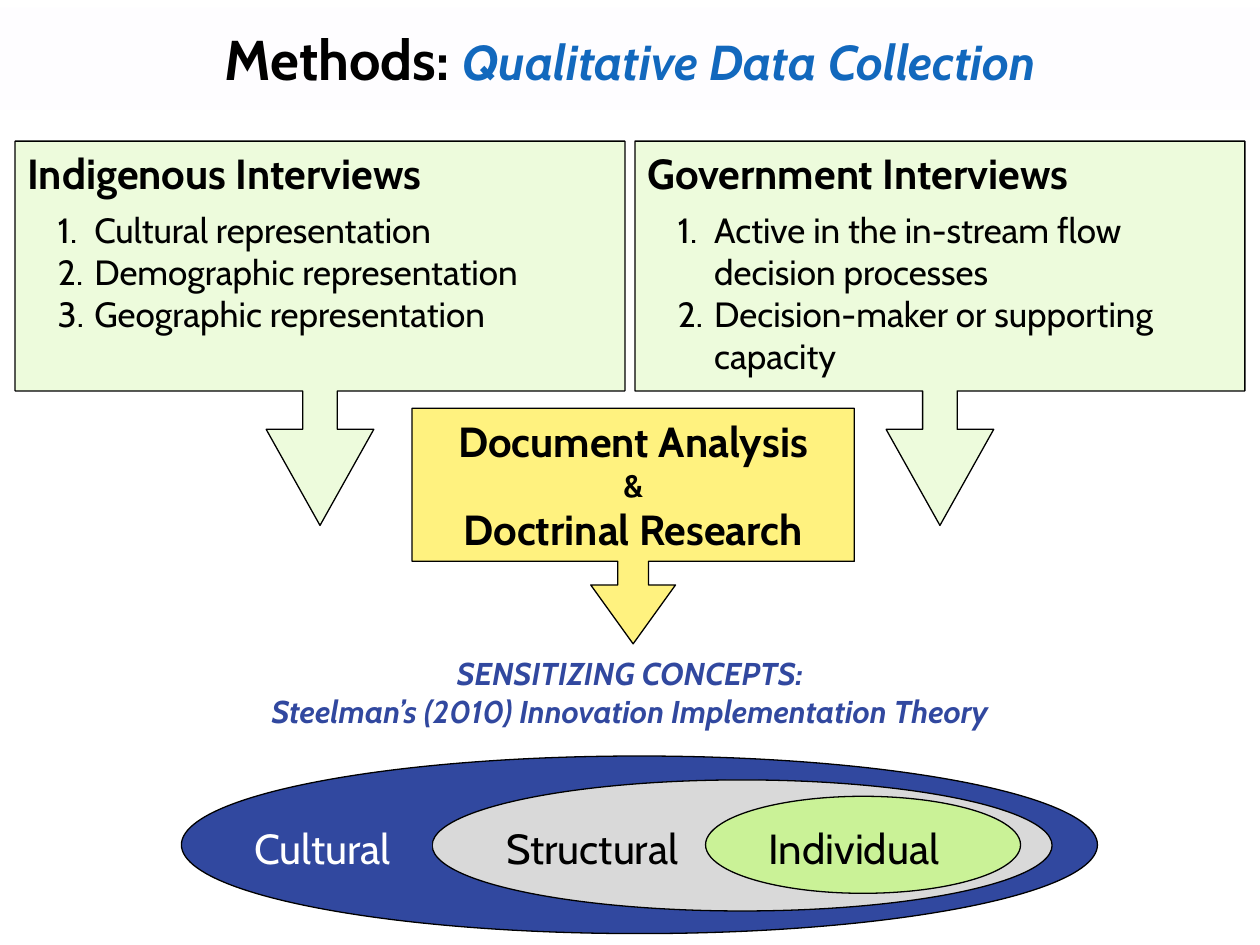
import dataclasses

import pptx
import pptx.dml.color
import pptx.enum.shapes
import pptx.enum.text
import pptx.oxml.ns
import pptx.util
from lxml import etree

SHAPE = pptx.enum.shapes.MSO_SHAPE
ANCHOR = pptx.enum.text.MSO_ANCHOR
ALIGN = pptx.enum.text.PP_ALIGN
FIT = pptx.enum.text.MSO_AUTO_SIZE


@dataclasses.dataclass(frozen=True)
class Theme:
    font: str = "Cabin"
    black: str = "000000"
    white: str = "FFFFFF"
    paper: str = "FEFDFF"
    navy: str = "31489F"
    blue: str = "1268BD"
    gray: str = "D9D9D9"
    lime: str = "CAF297"
    mint: str = "EDFBDC"
    yellow: str = "FFF27F"
    title: int = 32
    subtitle: int = 28
    heading: int = 24
    body: int = 20
    small: int = 18
    outline: float = 0.75


def rgb(color):
    return pptx.dml.color.RGBColor.from_string(color)


def write(para, text, font, size, color, bold=False, italic=False):
    span = para.add_run()
    span.text = text
    span.font.name = font
    span.font.size = pptx.util.Pt(size)
    span.font.color.rgb = rgb(color)
    span.font.bold = bold
    span.font.italic = italic


class SlideBuilder:
    """Places elements on a grid of 100 columns by 75 rows."""

    def __init__(self, deck, theme):
        self.theme = theme
        self.slide = deck.slides.add_slide(deck.slide_layouts[6])
        self.column = deck.slide_width / 100
        self.row = deck.slide_height / 75

    def place(self, left, top, width, height):
        return (round(left * self.column), round(top * self.row),
                round(width * self.column), round(height * self.row))

    def shape(self, kind, area, fill, outlined=True):
        box = self.slide.shapes.add_shape(kind, *self.place(*area))
        box.shadow.inherit = False
        box.fill.solid()
        box.fill.fore_color.rgb = rgb(fill)
        if outlined:
            box.line.color.rgb = rgb(self.theme.black)
            box.line.width = pptx.util.Pt(self.theme.outline)
        else:
            box.line.fill.background()
        return box

    def paragraphs(self, box, lines, align=ALIGN.LEFT, anchor=ANCHOR.TOP, fit=FIT.NONE):
        """Each line is a list of (text, format) spans."""
        frame = box.text_frame
        frame.word_wrap = True
        frame.auto_size = fit
        frame.vertical_anchor = anchor
        for index, line in enumerate(lines):
            para = frame.paragraphs[0] if index == 0 else frame.add_paragraph()
            para.alignment = align
            for text, style in line:
                write(para, text, **{"font": self.theme.font, "color": self.theme.black, **style})
        return frame.paragraphs

    def title(self, area, spans):
        box = self.shape(SHAPE.RECTANGLE, area, self.theme.paper, outlined=False)
        self.paragraphs(box, [spans], ALIGN.CENTER, ANCHOR.MIDDLE)

    def caption(self, area, lines, **style):
        box = self.slide.shapes.add_textbox(*self.place(*area))
        self.paragraphs(box, [[(line, style)] for line in lines], ALIGN.CENTER,
                        fit=FIT.SHAPE_TO_FIT_TEXT)

    def ellipse(self, area, fill):
        self.shape(SHAPE.OVAL, area, fill)

    def label(self, area, text, fill, color):
        box = self.shape(SHAPE.RECTANGLE, area, fill, outlined=False)
        self.paragraphs(box, [[(text, {"size": self.theme.heading, "color": color})]],
                        fit=FIT.SHAPE_TO_FIT_TEXT)

    def callout(self, area, fill, shaft, head):
        box = self.shape(SHAPE.DOWN_ARROW_CALLOUT, area, fill)
        for index, value in enumerate((shaft, head, 0.25, 0.65)):
            box.adjustments[index] = value
        return box

    def interviews(self, area, heading, items):
        box = self.callout(area, self.theme.mint, shaft=0.09, head=0.14)
        lines = [[(heading, {"size": self.theme.heading, "bold": True})]]
        lines += [[(item, {"size": self.theme.body})] for item in items]
        first, *numbered = self.paragraphs(box, lines)
        first.space_after = pptx.util.Pt(6)
        for para in numbered:
            self.number(para)

    def number(self, para):
        properties = para._p.get_or_add_pPr()
        properties.set("marL", str(pptx.util.Inches(0.53)))
        properties.set("indent", str(pptx.util.Inches(-0.29)))
        bullet = etree.SubElement(properties, pptx.oxml.ns.qn("a:buAutoNum"))
        bullet.set("type", "arabicPeriod")


def main():
    theme = Theme()
    deck = pptx.Presentation()
    deck.slide_width = pptx.util.Inches(10)
    deck.slide_height = pptx.util.Inches(7.5)
    page = SlideBuilder(deck, theme)

    # Nested concepts: all ellipses first, then their labels
    for area, fill in (((14.4, 60, 72.7, 14.1), theme.navy),
                       ((34.3, 61.9, 49.2, 10.4), theme.gray),
                       ((56, 63.2, 25, 7.7), theme.lime)):
        page.ellipse(area, fill)
    for left, width, text, fill, color in ((60, 17, "Individual", theme.lime, theme.black),
                                           (39.2, 16.3, "Structural", theme.gray, theme.black),
                                           (19.2, 15.1, "Cultural", theme.navy, theme.white)):
        page.label((left, 64.75, width, 5), text, fill, color)
    page.caption((0, 51.4, 100, 7.1),
                 ["SENSITIZING CONCEPTS:", "Steelman’s (2010) Innovation Implementation Theory"],
                 size=theme.small, color=theme.navy, bold=True, italic=True)

    # Title
    page.title((0, 0.6, 100, 8.1), [
        ("Methods: ", {"size": theme.title, "bold": True}),
        ("Qualitative Data Collection",
         {"size": theme.subtitle, "color": theme.blue, "bold": True, "italic": True})])

    # Interview sources, side by side
    sources = (
        ("Indigenous Interviews", ["Cultural representation", "Demographic representation",
                                   "Geographic representation"]),
        ("Government Interviews", ["Active in the in-stream flow decision processes",
                                   "Decision-maker or supporting capacity"]))
    for index, (heading, items) in enumerate(sources):
        page.interviews((1.2 + index * 49.2, 11.2, 48.4, 30.5), heading, items)

    # Document sources
    box = page.callout((32.7, 32.4, 35.1, 18.7), theme.yellow, shaft=0.13, head=0.18)
    page.paragraphs(box, [[(text, {"size": size, "bold": True})] for text, size in (
        ("Document Analysis", theme.heading), ("&", theme.small),
        ("Doctrinal Research", theme.heading))], ALIGN.CENTER, ANCHOR.MIDDLE)

    deck.save("out.pptx")


if __name__ == "__main__":
    main()
